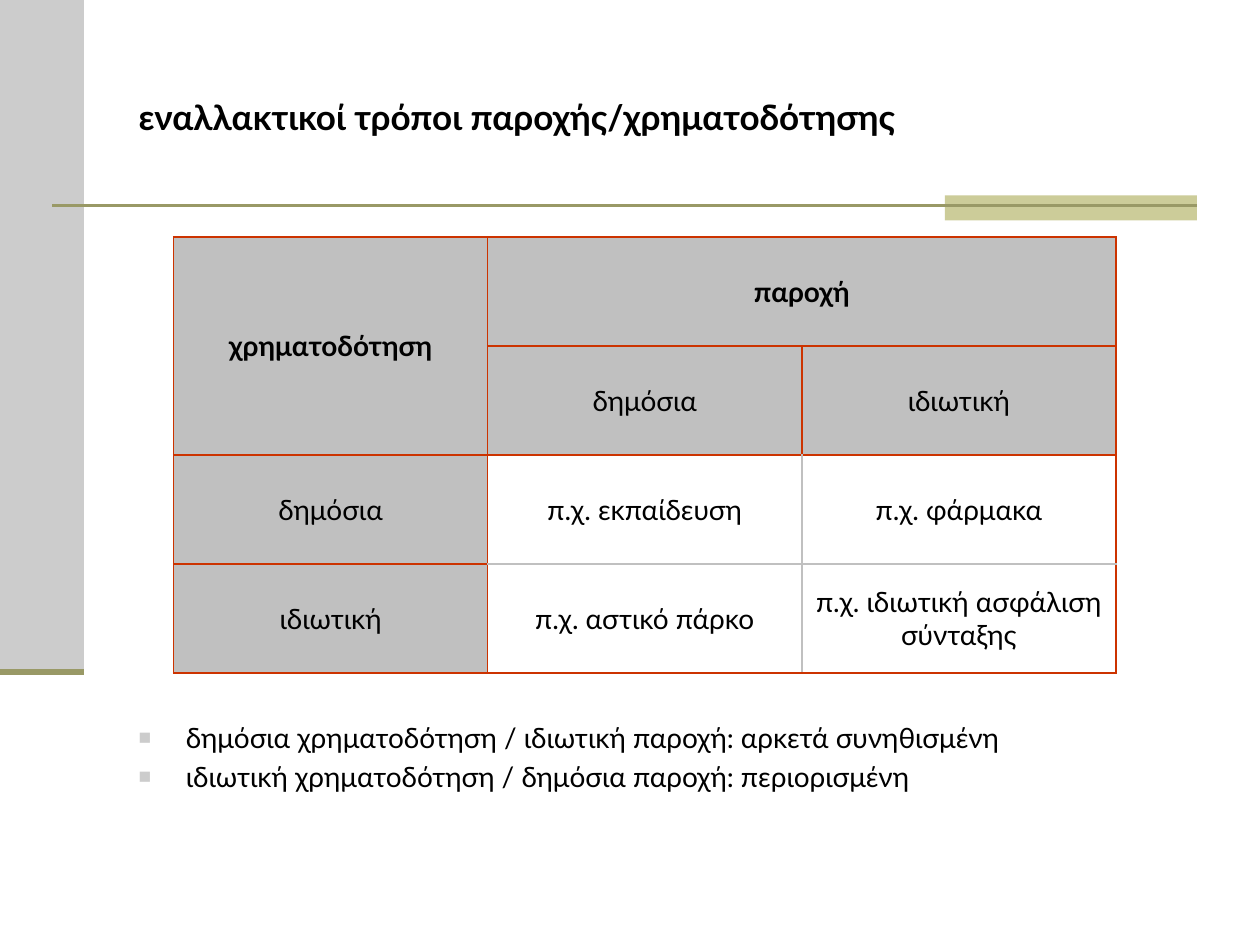
from lxml import etree
from pptx import Presentation
from pptx.dml.color import RGBColor
from pptx.enum import shapes, text
from pptx.oxml import ns
from pptx.util import Pt

FONT = "Lato"
BLACK = RGBColor(0x00, 0x00, 0x00)
SILVER = RGBColor(0xCC, 0xCC, 0xCC)
GREY = RGBColor(0xC0, 0xC0, 0xC0)
KHAKI = RGBColor(0xCC, 0xCC, 0x99)
OLIVE = RGBColor(0x99, 0x99, 0x66)
RED = RGBColor(0xCC, 0x33, 0x00)

HEADER_ROWS, HEADER_COLS = 2, 1
COL_WIDTH, ROW_HEIGHT = 179.5, 62.3
CELLS = [
    ["χρηματοδότηση", "παροχή", ""],
    ["", "δημόσια", "ιδιωτική"],
    ["δημόσια", "π.χ. εκπαίδευση", "π.χ. φάρμακα"],
    ["ιδιωτική", "π.χ. αστικό πάρκο", "π.χ. ιδιωτική ασφάλιση σύνταξης"],
]
REMARKS = [
    "δημόσια χρηματοδότηση / ιδιωτική παροχή: αρκετά συνηθισμένη",
    "ιδιωτική χρηματοδότηση / δημόσια παροχή: περιορισμένη",
]


def place(sp, x, y, w, h):
    sp.left, sp.top, sp.width, sp.height = Pt(x), Pt(y), Pt(w), Pt(h)


def add_run(p, words, size, bold=False):
    r = p.add_run()
    r.text = words
    r.font.name, r.font.size, r.font.bold = FONT, Pt(size), bold
    r.font.color.rgb = BLACK


def add_bar(s, x, y, w, h, color):
    sp = s.shapes.add_shape(shapes.MSO_SHAPE.RECTANGLE, Pt(x), Pt(y), Pt(w), Pt(h))
    sp.shadow.inherit = False
    sp.fill.solid()
    sp.fill.fore_color.rgb = color
    sp.line.fill.background()


def add_rule(s, x1, x2, y, width):
    cn = s.shapes.add_connector(shapes.MSO_CONNECTOR.STRAIGHT, Pt(x1), Pt(y), Pt(x2), Pt(y))
    cn.line.color.rgb = OLIVE
    cn.line.width = Pt(width)
    etree.SubElement(cn._element.spPr, ns.qn("a:effectLst"))


def set_title(s, words):
    sp = s.shapes.title
    place(sp, 72, 21.6, 612, 90)
    tf = sp.text_frame
    tf.auto_size = text.MSO_AUTO_SIZE.NONE
    tf.vertical_anchor = text.MSO_ANCHOR.MIDDLE
    p = tf.paragraphs[0]
    p.alignment = text.PP_ALIGN.LEFT
    add_run(p, words, 20, bold=True)


def set_bullet(p):
    pPr = p._p.get_or_add_pPr()
    pPr.set("marL", str(Pt(63)))
    pPr.set("indent", str(Pt(-27)))
    color = etree.SubElement(pPr, ns.qn("a:buClr"))
    etree.SubElement(color, ns.qn("a:srgbClr"), val=str(SILVER))
    etree.SubElement(pPr, ns.qn("a:buSzPct"), val="75000")
    etree.SubElement(pPr, ns.qn("a:buChar"), char="■")


def set_remarks(s, remarks):
    sp = s.placeholders[1]
    place(sp, 36, 408.2, 643.7, 72)
    tf = sp.text_frame
    tf.auto_size = text.MSO_AUTO_SIZE.NONE
    for i, words in enumerate(remarks):
        p = tf.add_paragraph() if i else tf.paragraphs[0]
        set_bullet(p)
        p.space_before = Pt(3.2 if i else 0)
        add_run(p, words, 16)


def is_header(row, col):
    return row < HEADER_ROWS or col < HEADER_COLS


def set_borders(cell, row, col):
    """Red edges, but grey between two example cells."""
    neighbours = {"L": (row, col - 1), "R": (row, col + 1),
                  "T": (row - 1, col), "B": (row + 1, col)}
    for side, (r, c) in neighbours.items():
        inside = r < len(CELLS) and c < len(CELLS[0])
        inner = inside and not is_header(row, col) and not is_header(r, c)
        ln = etree.SubElement(cell._tc.get_or_add_tcPr(), ns.qn(f"a:ln{side}"), w=str(Pt(1)))
        fill = etree.SubElement(ln, ns.qn("a:solidFill"))
        etree.SubElement(fill, ns.qn("a:srgbClr"), val=str(GREY if inner else RED))


def fill_cell(cell, row, col, words):
    set_borders(cell, row, col)
    if is_header(row, col):
        cell.fill.solid()
        cell.fill.fore_color.rgb = GREY
    else:
        cell.fill.background()
    cell.vertical_anchor = text.MSO_ANCHOR.MIDDLE
    if words:
        p = cell.text_frame.paragraphs[0]
        p.alignment = text.PP_ALIGN.CENTER
        add_run(p, words, 16, bold=row == 0)


def add_matrix(s):
    rows, cols = len(CELLS), len(CELLS[0])
    tbl = s.shapes.add_table(rows, cols, Pt(99.2), Pt(135.4),
                             Pt(cols * COL_WIDTH), Pt(rows * ROW_HEIGHT)).table
    tbl.first_row = tbl.horz_banding = False
    for column in tbl.columns:
        column.width = Pt(COL_WIDTH)
    for row in tbl.rows:
        row.height = Pt(ROW_HEIGHT)
    tbl.cell(0, 0).merge(tbl.cell(1, 0))
    tbl.cell(0, 1).merge(tbl.cell(0, 2))
    for i, line in enumerate(CELLS):
        for j, words in enumerate(line):
            fill_cell(tbl.cell(i, j), i, j, words)


def main():
    prs = Presentation()
    prs.slide_width, prs.slide_height = Pt(720), Pt(540)
    s = prs.slides.add_slide(prs.slide_layouts[1])
    add_bar(s, 0, 0, 48, 384, SILVER)
    add_bar(s, 540, 111.6, 144, 14.4, KHAKI)
    add_rule(s, 30, 684, 117.6, 1.5)
    add_rule(s, 0, 48, 384, 3.5)
    set_title(s, "εναλλακτικοί τρόποι παροχής/χρηματοδότησης")
    set_remarks(s, REMARKS)
    add_matrix(s)
    prs.save("out.pptx")


if __name__ == "__main__":
    main()
